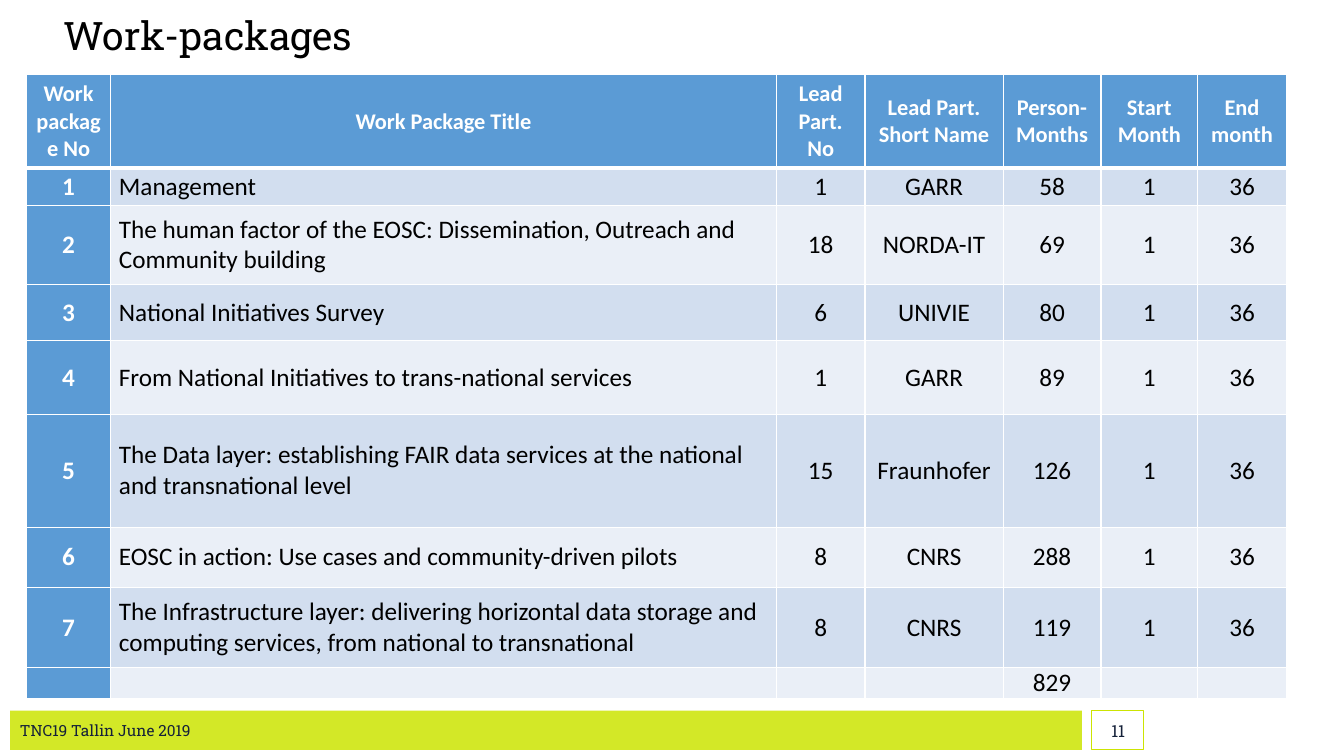
import pptx
import pptx.dml.color
import pptx.enum.shapes
import pptx.enum.text
import pptx.oxml
import pptx.oxml.ns
import pptx.util
from pptx.util import Inches

COLORS = {
    "blue": "5B9BD5",
    "band_dark": "D2DEEF",
    "band_light": "EAEFF7",
    "white": "FFFFFF",
    "black": "000000",
    "navy": "152139",
    "lime": "CCE402",
}
SLAB = "Roboto Slab"
BODY = "Calibri"
ALIGN = pptx.enum.text.PP_ALIGN
MIDDLE = pptx.enum.text.MSO_ANCHOR.MIDDLE

HEADERS = ["Work package No", "Work Package Title", "Lead Part. No",
           "Lead Part. Short Name", "Person-Months", "Start Month", "End month"]
PACKAGES = [
    ("Management", 1, "GARR", 58),
    ("The human factor of the EOSC: Dissemination, Outreach and Community building",
     18, "NORDA-IT", 69),
    ("National Initiatives Survey", 6, "UNIVIE", 80),
    ("From National Initiatives to trans-national services", 1, "GARR", 89),
    ("The Data layer: establishing FAIR data services at the national "
     "and transnational level", 15, "Fraunhofer", 126),
    ("EOSC in action: Use cases and community-driven pilots", 8, "CNRS", 288),
    ("The Infrastructure layer: delivering horizontal data storage and computing "
     "services, from national to transnational", 8, "CNRS", 119),
]
START, END = 1, 36
COL_WIDTHS = [0.84, 6.6, 0.88, 1.37, 0.97, 0.96, 0.88]
ROW_HEIGHTS = [0.93, 0.37, 0.78, 0.56, 0.73, 1.12, 0.6, 0.79, 0.31]


def rgb(name):
    """Return the named colour."""
    return pptx.dml.color.RGBColor.from_string(COLORS[name])


def add_text(p, text, size, font, color, bold=False):
    """Add one formatted run to a paragraph."""
    r = p.add_run()
    r.text = text
    r.font.size = pptx.util.Pt(size)
    r.font.name = font
    r.font.bold = bold
    r.font.color.rgb = rgb(color)


def set_borders(cell, top, bottom):
    """Give a cell white borders, with top and bottom widths in points."""
    tc_pr = cell._tc.get_or_add_tcPr()
    sides = [("lnL", 1), ("lnR", 1), ("lnT", top), ("lnB", bottom)]
    for i, (tag, width) in enumerate(sides):
        tc_pr.insert(i, pptx.oxml.parse_xml(
            f'<a:{tag} {pptx.oxml.ns.nsdecls("a")} w="{pptx.util.Pt(width)}">'
            f'<a:solidFill><a:srgbClr val="{COLORS["white"]}"/></a:solidFill></a:{tag}>'))


def fill_cell(cell, text, row, col):
    """Write and style one table cell according to its row and column."""
    heading = row == 0 or col == 0
    band = "band_dark" if row % 2 else "band_light"
    cell.fill.solid()
    cell.fill.fore_color.rgb = rgb("blue" if heading else band)
    set_borders(cell, 3 if row == 1 else 1, 3 if row == 0 else 1)
    cell.margin_left = cell.margin_right = Inches(0.08)
    cell.margin_top = cell.margin_bottom = 0
    cell.vertical_anchor = MIDDLE
    if text:
        p = cell.text_frame.paragraphs[0]
        p.alignment = ALIGN.LEFT if col == 1 and row else ALIGN.CENTER
        add_text(p, text, 18 if row else 16, BODY,
                 "white" if heading else "black", heading)


def add_package_table(s):
    """Add the table of work packages with its total row."""
    total = sum(months for *_, months in PACKAGES)
    rows = [HEADERS]
    rows += [(n, *package, START, END) for n, package in enumerate(PACKAGES, 1)]
    rows.append(("", "", "", "", total, "", ""))
    table = s.shapes.add_table(
        len(rows), len(HEADERS), Inches(0.26), Inches(0.74),
        Inches(sum(COL_WIDTHS)), Inches(sum(ROW_HEIGHTS))).table
    table.horz_banding = False
    for column, width in zip(table.columns, COL_WIDTHS):
        column.width = Inches(width)
    for i, (values, height) in enumerate(zip(rows, ROW_HEIGHTS)):
        table.rows[i].height = Inches(height)
        for j, value in enumerate(values):
            fill_cell(table.cell(i, j), str(value), i, j)


def set_title(s, text):
    """Place and format the slide title."""
    sp = s.shapes.title
    sp.left, sp.top, sp.width, sp.height = 0, Inches(0.12), Inches(13.33), Inches(0.5)
    tf = sp.text_frame
    tf.margin_left, tf.margin_right = Inches(0.63), Inches(0.43)
    tf.margin_top = tf.margin_bottom = Inches(0.04)
    tf.vertical_anchor = pptx.enum.text.MSO_ANCHOR.TOP
    tf.auto_size = pptx.enum.text.MSO_AUTO_SIZE.NONE
    p = tf.paragraphs[0]
    p.alignment = ALIGN.LEFT
    p.line_spacing = 0.9
    add_text(p, text, 28, SLAB, "black")


def add_footer_box(s, left, width, text, size, fill, align):
    """Add one footer rectangle with text."""
    sp = s.shapes.add_shape(pptx.enum.shapes.MSO_SHAPE.RECTANGLE, Inches(left),
                            Inches(7.05), Inches(width), Inches(0.39))
    sp.shadow.inherit = False
    sp.fill.solid()
    sp.fill.fore_color.rgb = rgb(fill)
    sp.line.fill.background()
    tf = sp.text_frame
    tf.word_wrap = True
    tf.vertical_anchor = MIDDLE
    p = tf.paragraphs[0]
    p.alignment = align
    add_text(p, text, size, SLAB, "navy")
    return sp


def set_alpha(sp, percent):
    """Set the opacity of a solid fill."""
    color = sp._element.spPr.find(".//" + pptx.oxml.ns.qn("a:srgbClr"))
    color.append(pptx.oxml.parse_xml(
        f'<a:alpha {pptx.oxml.ns.nsdecls("a")} val="{percent * 1000}"/>'))


def main():
    """Build the work-packages slide."""
    prs = pptx.Presentation()
    prs.slide_width, prs.slide_height = Inches(13.33), Inches(7.5)
    s = prs.slides.add_slide(prs.slide_layouts[5])
    set_title(s, "Work-packages")
    add_package_table(s)
    banner = add_footer_box(s, 0.1, 10.63, "TNC19 Tallin June 2019", 11, "lime", ALIGN.LEFT)
    set_alpha(banner, 85)
    number = add_footer_box(s, 10.83, 0.51, "11", 12, "white", ALIGN.RIGHT)
    number.text_frame.margin_right = Inches(0.18)
    number.line.color.rgb = rgb("lime")
    number.line.width = pptx.util.Pt(0.75)
    prs.save("out.pptx")


if __name__ == "__main__":
    main()
